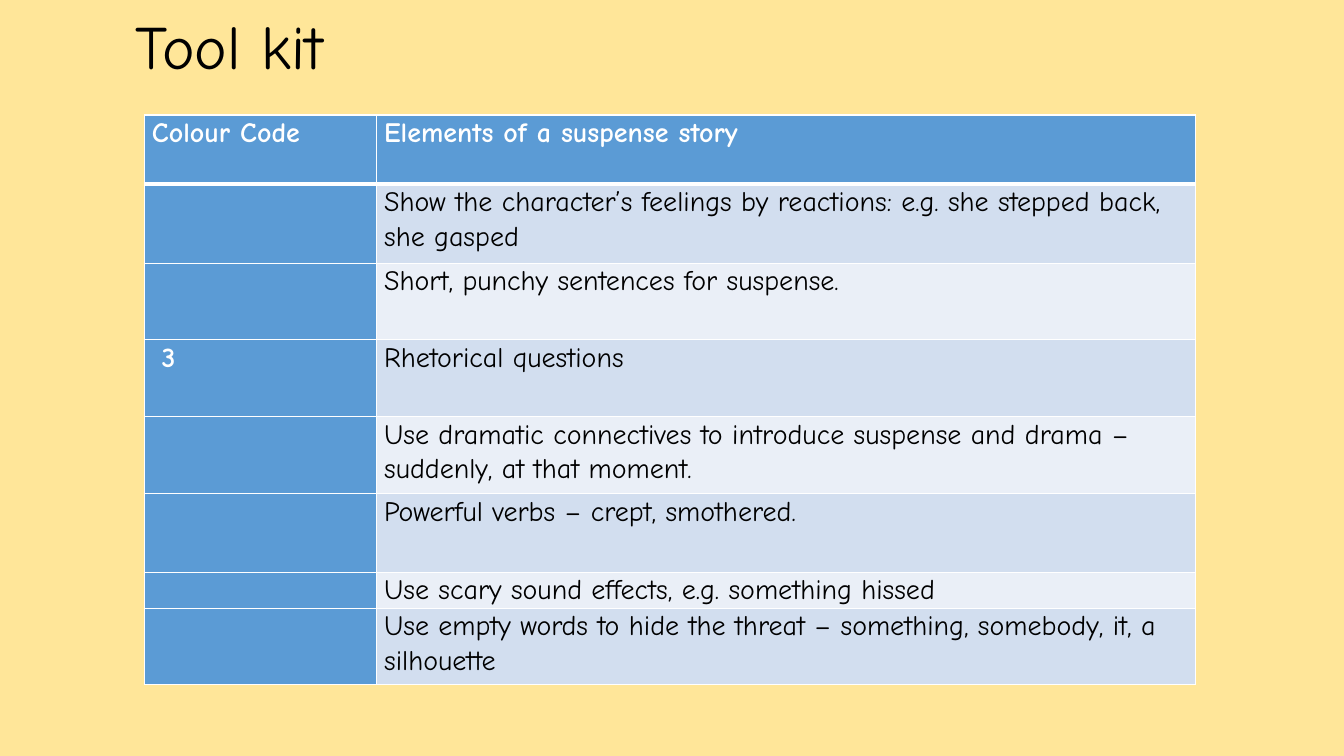
"""Build the suspense story tool kit slide."""
from lxml.etree import SubElement
from pptx import Presentation
from pptx.dml.color import RGBColor
from pptx.enum.text import MSO_ANCHOR
from pptx.oxml.ns import qn
from pptx.util import Cm, Pt

SAND = RGBColor(0xFF, 0xE6, 0x99)
BLUE = RGBColor(0x5B, 0x9B, 0xD5)
MID = RGBColor(0xD2, 0xDE, 0xEF)
PALE = RGBColor(0xEA, 0xEF, 0xF7)
WHITE = RGBColor(0xFF, 0xFF, 0xFF)
BLACK = RGBColor(0, 0, 0)
FONT = "Comic Neue"


def write(para, text, spacing, **format):
    para.line_spacing = spacing
    run = para.add_run()
    run.text = text
    for name, value in format.items():
        setattr(run.font, name, value)
    run.font.name = FONT
    return run.font


def border(cell, side, width):
    line = SubElement(cell._tc.get_or_add_tcPr(), qn(f"a:{side}"), w=str(Pt(width)))
    fill = SubElement(line, qn("a:solidFill"))
    SubElement(fill, qn("a:srgbClr"), val=str(WHITE))


deck = Presentation()
deck.slide_width, deck.slide_height = Cm(33.87), Cm(19.05)
slide = deck.slides.add_slide(deck.slide_layouts[6])
slide.background.fill.solid()
slide.background.fill.fore_color.rgb = SAND

title = slide.shapes.add_textbox(Cm(3.17), Cm(0), Cm(26.24), Cm(2.51))
frame = title.text_frame
frame.word_wrap = True
frame.vertical_anchor = MSO_ANCHOR.MIDDLE
write(frame.paragraphs[0], "Tool kit", 0.9, size=Pt(44)).color.rgb = BLACK

rows = [
    ("Colour Code", "Elements of a suspense story", 1.74),
    ("", "Show the character’s feelings by reactions: e.g. she stepped back, she gasped", 1.99),
    ("", "Short, punchy sentences for suspense.", 1.93),
    ("3", "Rhetorical questions", 1.94),
    ("", "Use dramatic connectives to introduce suspense and drama – suddenly, at that moment.", 1.94),
    ("", "Powerful verbs – crept, smothered.", 1.98),
    ("", "Use scary sound effects, e.g. something hissed", 0.88),
    ("", "Use empty words to hide the threat – something, somebody, it, a silhouette", 1.93),
]
widths = (5.85, 20.63)
high = sum(row[2] for row in rows)
holder = slide.shapes.add_table(
    len(rows), len(widths), Cm(3.64), Cm(2.9), Cm(sum(widths)), Cm(high)
)
table = holder.table
for column, width in zip(table.columns, widths):
    column.width = Cm(width)

for i, (code, element, height) in enumerate(rows):
    table.rows[i].height = Cm(height)
    for j, text in enumerate((code, element)):
        cell = table.cell(i, j)
        key = i == 0 or j == 0
        margins = {
            "margin_left": Cm(0.43 if text == "3" else 0.19),
            "margin_right": Cm(0.19),
            "margin_top": 0,
            "margin_bottom": 0,
        }
        for name, value in margins.items():
            setattr(cell, name, value)
        for side in ("lnL", "lnR", "lnT", "lnB"):
            thick = (i, side) in ((0, "lnB"), (1, "lnT"))
            border(cell, side, 3 if thick else 1)
        cell.fill.solid()
        cell.fill.fore_color.rgb = BLUE if key else (PALE, MID)[i % 2]
        if text:
            para = cell.text_frame.paragraphs[0]
            font = write(para, text, 1.07, size=Pt(20), bold=key)
            font.color.rgb = WHITE if key else BLACK

deck.save("out.pptx")
